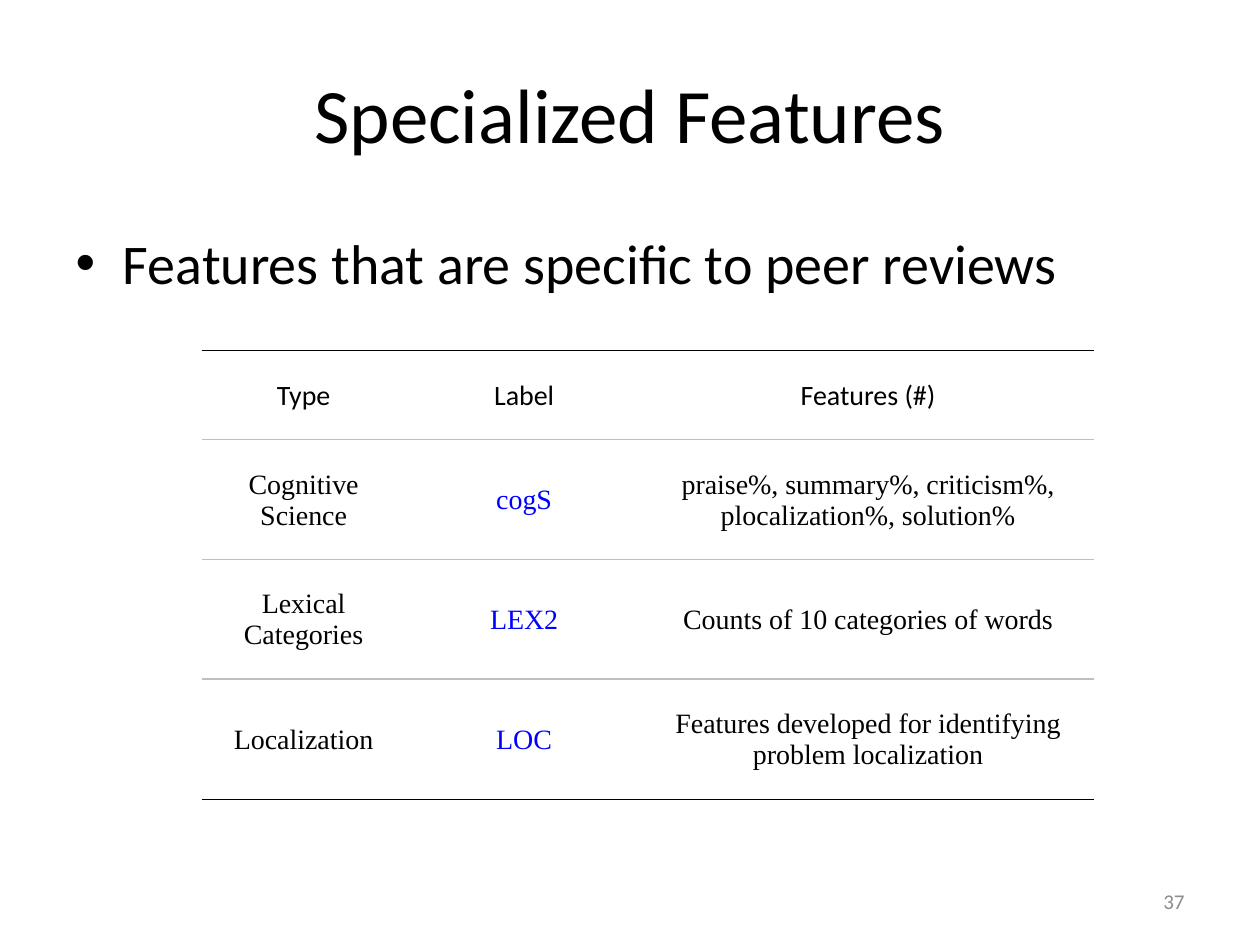
from dataclasses import dataclass

from lxml.etree import SubElement
from pptx import Presentation
from pptx.dml.color import RGBColor as Rgb
from pptx.enum.text import MSO_ANCHOR as Anchor, PP_ALIGN as Align
from pptx.oxml.ns import qn
from pptx.util import Inches, Pt

COLORS = {
    "text": "000000",
    "label": "0000FF",
    "rule": "BFBFBF",
    "background": "FFFFFF",
    "page": "8C8C8C",
}
SANS = "Calibri"
SERIF = "Times New Roman"


@dataclass
class Feature:
    category: str
    label: str
    details: str


@dataclass
class Rule:
    color: str
    width: float


HEADER = Feature("Type", "Label", "Features (#)")
FEATURES = [
    Feature("Cognitive Science", "cogS",
            "praise%, summary%, criticism%, plocalization%, solution%"),
    Feature("Lexical Categories", "LEX2", "Counts of 10 categories of words"),
    Feature("Localization", "LOC",
            "Features developed for identifying problem localization"),
]
OUTER = Rule("text", 0.25)
INNER = Rule("rule", 1)
COLUMN_WIDTHS = [1.62, 1.88, 3.58]
HEADER_HEIGHT, ROW_HEIGHT = 0.71, 0.95


def write(frame, text: str, *, size: float, font: str = SANS,
          color: str = "text", align=None) -> None:
    paragraph = frame.paragraphs[0]
    paragraph.alignment = align
    run = paragraph.add_run()
    run.text = text
    run.font.size = Pt(size)
    run.font.name = font
    run.font.color.rgb = Rgb.from_string(COLORS[color])


def place(shape, left: float, top: float, width: float, height: float) -> None:
    shape.left, shape.top = Inches(left), Inches(top)
    shape.width, shape.height = Inches(width), Inches(height)


def set_border(cell, side: str, rule: Rule | None) -> None:
    line = SubElement(cell._tc.get_or_add_tcPr(), qn(f"a:ln{side}"))
    if rule is None:
        SubElement(line, qn("a:noFill"))
        return
    line.set("w", str(int(Pt(rule.width))))
    fill = SubElement(line, qn("a:solidFill"))
    SubElement(fill, qn("a:srgbClr"), val=COLORS[rule.color])


def format_cell(cell, top: Rule, bottom: Rule) -> None:
    cell.vertical_anchor = Anchor.MIDDLE
    cell.margin_left = cell.margin_right = cell.margin_top = Inches(0.01)
    cell.margin_bottom = 0
    for side, rule in (("L", None), ("R", None), ("T", top), ("B", bottom)):
        set_border(cell, side, rule)
    cell.fill.solid()
    cell.fill.fore_color.rgb = Rgb.from_string(COLORS["background"])


def add_feature_table(slide, left: float, top: float) -> None:
    rows = [HEADER, *FEATURES]
    height = HEADER_HEIGHT + ROW_HEIGHT * len(FEATURES)
    table = slide.shapes.add_table(
        len(rows), len(COLUMN_WIDTHS), Inches(left), Inches(top),
        Inches(sum(COLUMN_WIDTHS)), Inches(height)).table
    table.first_row = table.horz_banding = False
    for column, width in zip(table.columns, COLUMN_WIDTHS):
        column.width = Inches(width)
    for r, feature in enumerate(rows):
        is_header = r == 0
        table.rows[r].height = Inches(HEADER_HEIGHT if is_header else ROW_HEIGHT)
        above = OUTER if is_header else INNER
        below = OUTER if r == len(rows) - 1 else INNER
        for c, text in enumerate((feature.category, feature.label, feature.details)):
            cell = table.cell(r, c)
            format_cell(cell, above, below)
            write(cell.text_frame, text, size=16,
                  font=SANS if is_header else SERIF,
                  color="label" if c == 1 and not is_header else "text",
                  align=Align.CENTER)


def main() -> None:
    deck = Presentation()
    deck.slide_width, deck.slide_height = Inches(10), Inches(7.5)
    slide = deck.slides.add_slide(deck.slide_layouts[1])

    title = slide.shapes.title
    place(title, 0.5, 0.27, 9, 1.25)
    title.text_frame.vertical_anchor = Anchor.MIDDLE
    write(title.text_frame, "Specialized Features", size=44, align=Align.CENTER)

    body = slide.placeholders[1]
    place(body, 0.5, 1.76, 8.79, 4.15)
    write(body.text_frame, "Features that are specific to peer reviews", size=32)

    add_feature_table(slide, 1.6, 2.78)

    page = slide.shapes.add_textbox(
        Inches(7.17), Inches(6.95), Inches(2.33), Inches(0.4)).text_frame
    page.word_wrap = True
    page.vertical_anchor = Anchor.MIDDLE
    write(page, "37", size=12, color="page", align=Align.RIGHT)

    deck.save("out.pptx")


if __name__ == "__main__":
    main()
